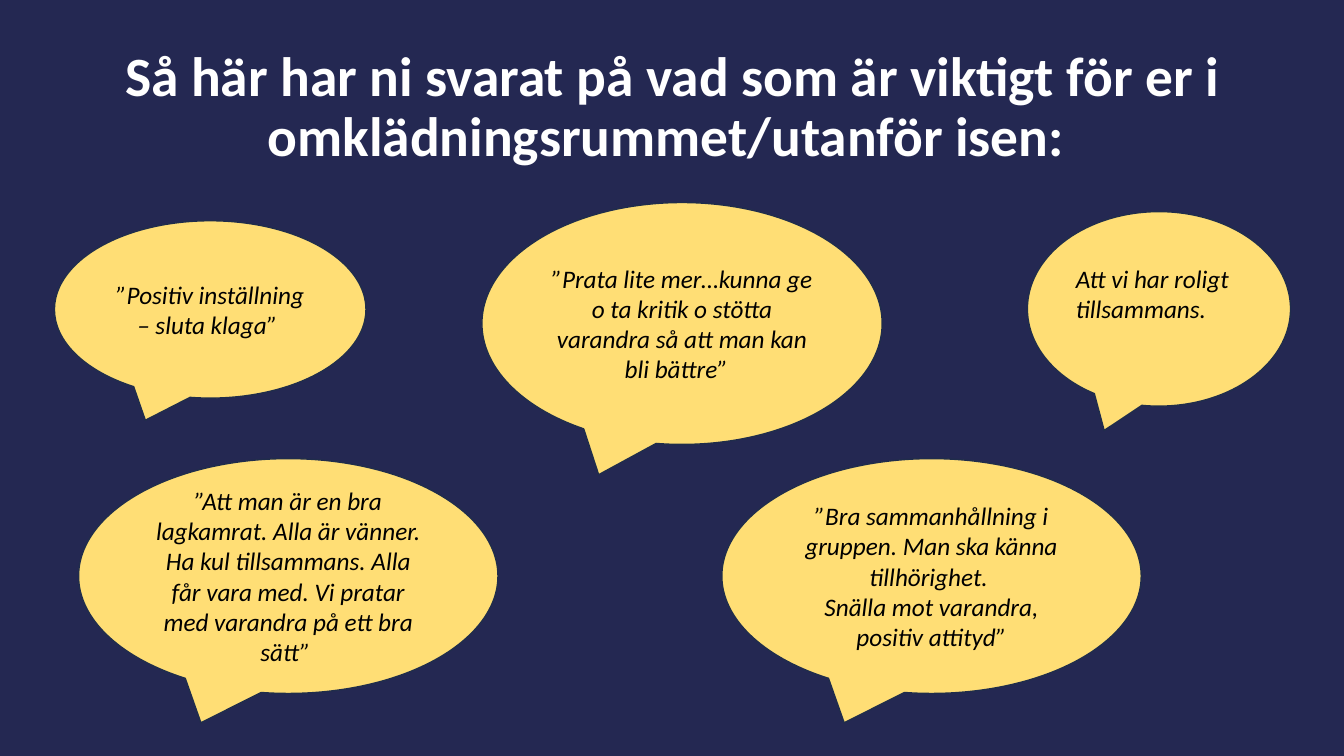
from dataclasses import dataclass

from pptx import Presentation
from pptx.dml.color import RGBColor as Rgb
from pptx.enum.shapes import MSO_SHAPE as Shape
from pptx.enum.text import MSO_ANCHOR as Anchor, PP_ALIGN as Align
from pptx.slide import Slide
from pptx.text.text import TextFrame
from pptx.util import Inches, Pt


@dataclass(frozen=True)
class Theme:
    back: Rgb = Rgb.from_string("242852")
    fill: Rgb = Rgb.from_string("FFDE75")
    edge: Rgb = Rgb.from_string("202D4B")
    head: Rgb = Rgb.from_string("FFFFFF")
    ink: Rgb = Rgb.from_string("000000")
    font: str = "Calibri"
    title: float = 39.6
    body: float = 18


@dataclass(frozen=True)
class Bubble:
    left: float
    top: float
    width: float
    height: float
    lines: tuple[str, ...]
    align: Align = Align.CENTER
    foot: float = 0.05


THEME = Theme()
TITLE = "Så här har ni svarat på vad som är viktigt för er i omklädningsrummet/utanför isen: "
BUBBLES = (
    Bubble(0.54, 2.19, 3.09, 1.76, ("”Positiv inställning – sluta klaga” ",)),
    Bubble(4.78, 2.01, 3.97, 2.4,
           ("”Prata lite mer…kunna ge o ta kritik o stötta varandra så att man kan bli bättre”  ",)),
    Bubble(0.78, 4.55, 4.16, 2.33,
           ("”Att man är en bra lagkamrat. Alla är vänner. Ha kul tillsammans. "
            "Alla får vara med. Vi pratar med varandra på ett bra sätt” ",)),
    Bubble(7.16, 4.55, 4.16, 2.33,
           ("”Bra sammanhållning i gruppen. Man ska känna tillhörighet. ",
            "Snälla mot varandra, positiv attityd”")),
    Bubble(10.19, 2.1, 2.61, 1.93, ("Att vi har roligt tillsammans. ",), Align.LEFT, 0.35),
)


def write(frame: TextFrame, lines: tuple[str, ...], size: float, color: Rgb,
          align: Align, foot: float) -> None:
    frame.word_wrap = True
    frame.vertical_anchor = Anchor.MIDDLE
    frame.margin_bottom = Inches(foot)
    frame.text = "\n".join(lines)
    for para in frame.paragraphs:
        para.alignment = align
        para.font.name = THEME.font
        para.font.size = Pt(size)
        para.font.color.rgb = color


def add_title(slide: Slide) -> None:
    box = slide.shapes.add_textbox(Inches(0.92), Inches(0.4), Inches(11.5), Inches(1.45))
    write(box.text_frame, (TITLE,), THEME.title, THEME.head, Align.CENTER, 0.14)
    para = box.text_frame.paragraphs[0]
    para.font.bold = True
    para.line_spacing = 0.9


def add_bubble(slide: Slide, item: Bubble) -> None:
    shape = slide.shapes.add_shape(
        Shape.OVAL_CALLOUT, Inches(item.left), Inches(item.top),
        Inches(item.width), Inches(item.height))
    shape.shadow.inherit = False
    shape.fill.solid()
    shape.fill.fore_color.rgb = THEME.fill
    shape.line.color.rgb = THEME.edge
    shape.line.width = Pt(1)
    write(shape.text_frame, item.lines, THEME.body, THEME.ink, item.align, item.foot)
    for para in shape.text_frame.paragraphs:
        para.font.italic = True


def main() -> None:
    deck = Presentation()
    deck.slide_width = Inches(13.33)
    deck.slide_height = Inches(7.5)
    slide = deck.slides.add_slide(deck.slide_layouts[6])
    slide.background.fill.solid()
    slide.background.fill.fore_color.rgb = THEME.back
    add_title(slide)
    for item in BUBBLES:
        add_bubble(slide, item)
    deck.save("out.pptx")


if __name__ == "__main__":
    main()
